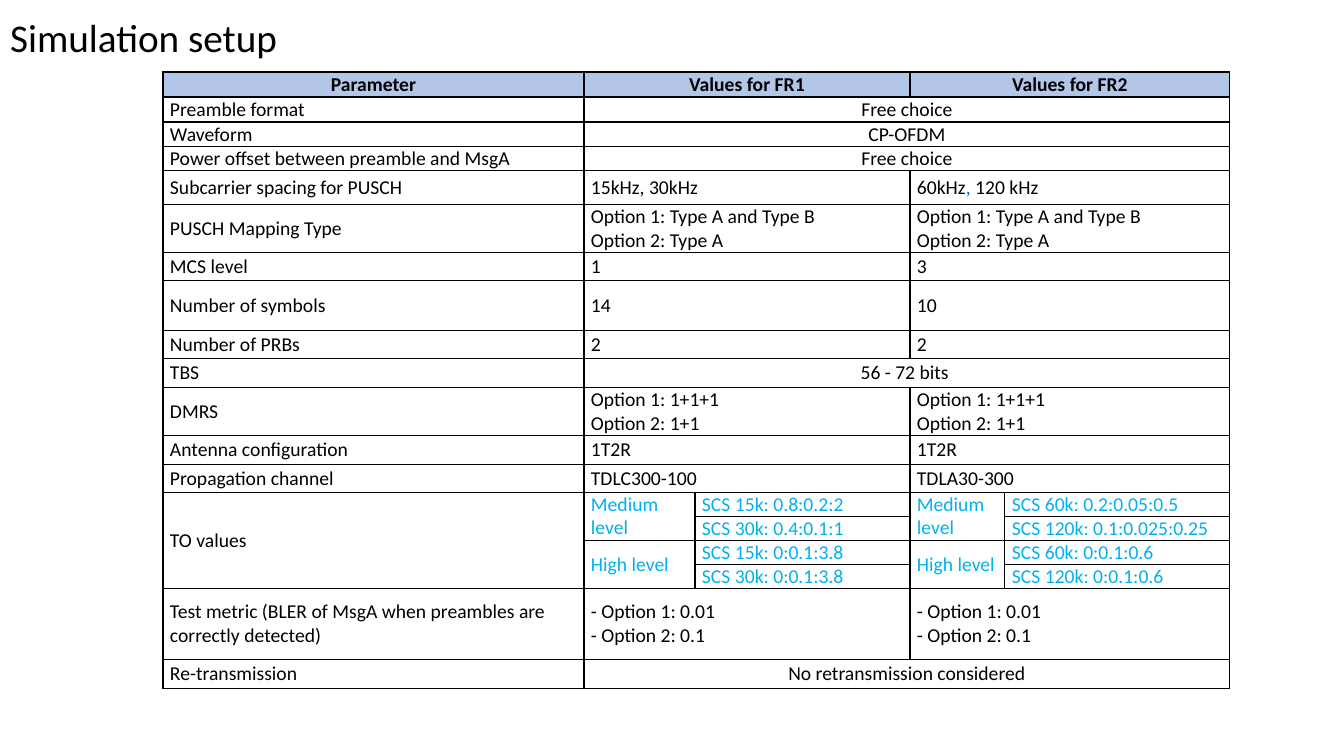
from dataclasses import dataclass

from lxml.etree import SubElement
from pptx import Presentation
from pptx.dml.color import RGBColor
from pptx.enum.text import MSO_ANCHOR, PP_ALIGN
from pptx.oxml.ns import qn
from pptx.slide import Slide
from pptx.table import Table, _Cell
from pptx.text.text import _Run
from pptx.util import Emu, Pt

EMU_PER_PX = 914400 / 100.8
FONT = "Calibri"
BLACK = "000000"
WHITE = "FFFFFF"
HEADER_BLUE = "B4C6E7"
CYAN = "00B0F0"
COMMA_BLUE = "0070C0"
COLUMN_WIDTHS = (421, 111, 215, 95, 225)
FR1_COLUMN, FR2_COLUMN = 1, 3


@dataclass(frozen=True)
class Parameter:
    height: int
    label: str
    fr1: str
    fr2: str | None = None
    accent: str = ""


@dataclass(frozen=True)
class TimingOffset:
    level: str
    fr1: tuple[str, str]
    fr2: tuple[str, str]


@dataclass(frozen=True)
class Entry:
    row: int
    column: int
    text: str
    columns: int = 1
    rows: int = 1
    centered: bool = False
    bold: bool = False
    color: str = BLACK
    fill: str = WHITE
    accent: str = ""


MAPPING_OPTIONS = "Option 1: Type A and Type B\nOption 2: Type A"
DMRS_OPTIONS = "Option 1: 1+1+1\nOption 2: 1+1"
METRIC_OPTIONS = "- Option 1: 0.01\n- Option 2: 0.1"

PARAMETERS_ABOVE = (
    Parameter(25, "Preamble format", "Free choice"),
    Parameter(25, "Waveform", "CP-OFDM"),
    Parameter(24, "Power offset between preamble and MsgA", "Free choice"),
    Parameter(34, "Subcarrier spacing for PUSCH", "15kHz, 30kHz", "60kHz, 120 kHz", ","),
    Parameter(48, "PUSCH Mapping Type", MAPPING_OPTIONS, MAPPING_OPTIONS),
    Parameter(28, "MCS level", "1", "3"),
    Parameter(50, "Number of symbols", "14", "10"),
    Parameter(28, "Number of PRBs", "2", "2"),
    Parameter(29, "TBS", "56 - 72 bits "),
    Parameter(47, "DMRS", DMRS_OPTIONS, DMRS_OPTIONS),
    Parameter(29, "Antenna configuration", "1T2R", "1T2R"),
    Parameter(28, "Propagation channel", "TDLC300-100", "TDLA30-300"),
)
TIMING_OFFSETS = (
    TimingOffset(
        "Medium level",
        ("SCS 15k: 0.8:0.2:2", "SCS 30k: 0.4:0.1:1"),
        ("SCS 60k: 0.2:0.05:0.5", "SCS 120k: 0.1:0.025:0.25"),
    ),
    TimingOffset(
        "High level",
        ("SCS 15k: 0:0.1:3.8", "SCS 30k: 0:0.1:3.8"),
        ("SCS 60k: 0:0.1:0.6", "SCS 120k: 0:0.1:0.6"),
    ),
)
PARAMETERS_BELOW = (
    Parameter(
        71,
        "Test metric (BLER of MsgA when preambles are correctly detected)",
        METRIC_OPTIONS,
        METRIC_OPTIONS,
    ),
    Parameter(29, "Re-transmission", "No retransmission considered"),
)
HEADER_HEIGHT = 25
TIMING_HEIGHT = 24
TIMING_ROWS = 2 * len(TIMING_OFFSETS)
ROW_HEIGHTS = (
    HEADER_HEIGHT,
    *(parameter.height for parameter in PARAMETERS_ABOVE),
    *[TIMING_HEIGHT] * TIMING_ROWS,
    *(parameter.height for parameter in PARAMETERS_BELOW),
)


def px(length: int) -> Emu:
    return Emu(round(length * EMU_PER_PX))


def rgb(color: str) -> RGBColor:
    return RGBColor.from_string(color)


def format_run(run: _Run, size: int, color: str, bold: bool = False) -> None:
    run.font.name = FONT
    run.font.size = Pt(size)
    run.font.bold = bold
    run.font.color.rgb = rgb(color)


def header_entries() -> list[Entry]:
    headings = (
        (0, "Parameter", 1),
        (FR1_COLUMN, "Values for FR1", 2),
        (FR2_COLUMN, "Values for FR2", 2),
    )
    return [
        Entry(0, column, text, columns, centered=True, bold=True, fill=HEADER_BLUE)
        for column, text, columns in headings
    ]


def parameter_entries(parameters: tuple[Parameter, ...], first_row: int) -> list[Entry]:
    entries = []
    for row, parameter in enumerate(parameters, first_row):
        entries.append(Entry(row, 0, parameter.label))
        if parameter.fr2 is None:
            entries.append(Entry(row, FR1_COLUMN, parameter.fr1, 4, centered=True))
        else:
            entries.append(Entry(row, FR1_COLUMN, parameter.fr1, 2))
            entries.append(Entry(row, FR2_COLUMN, parameter.fr2, 2, accent=parameter.accent))
    return entries


def timing_entries(first_row: int) -> list[Entry]:
    entries = [Entry(first_row, 0, "TO values", rows=TIMING_ROWS)]
    for index, offset in enumerate(TIMING_OFFSETS):
        row = first_row + 2 * index
        for column, values in ((FR1_COLUMN, offset.fr1), (FR2_COLUMN, offset.fr2)):
            entries.append(Entry(row, column, offset.level, rows=2, color=CYAN))
            for step, value in enumerate(values):
                entries.append(Entry(row + step, column + 1, value, color=CYAN))
    return entries


def style_cell(cell: _Cell) -> None:
    cell.margin_left = cell.margin_right = px(7)
    cell.margin_top = cell.margin_bottom = 0
    cell.vertical_anchor = MSO_ANCHOR.MIDDLE
    properties = cell._tc.get_or_add_tcPr()
    for side in ("a:lnL", "a:lnR", "a:lnT", "a:lnB"):
        line = SubElement(properties, qn(side), w=str(Pt(1)))
        SubElement(SubElement(line, qn("a:solidFill")), qn("a:srgbClr"), val=BLACK)
    cell.fill.solid()
    cell.fill.fore_color.rgb = rgb(WHITE)


def fill_entry(table: Table, entry: Entry) -> None:
    cell = table.cell(entry.row, entry.column)
    if entry.columns > 1 or entry.rows > 1:
        cell.merge(
            table.cell(entry.row + entry.rows - 1, entry.column + entry.columns - 1)
        )
    cell.fill.fore_color.rgb = rgb(entry.fill)
    cell.text_frame.text = entry.text
    for paragraph in cell.text_frame.paragraphs:
        paragraph.alignment = PP_ALIGN.CENTER if entry.centered else PP_ALIGN.LEFT
        if entry.accent:
            pieces = paragraph.text.partition(entry.accent)
            paragraph.clear()
            for piece in pieces:
                paragraph.add_run().text = piece
        for run in paragraph.runs:
            color = COMMA_BLUE if run.text == entry.accent else entry.color
            format_run(run, 14, color, entry.bold)


def add_title(slide: Slide) -> None:
    title = slide.shapes.title
    title.left, title.top, title.width, title.height = px(0), px(0), px(1159), px(79)
    title.text_frame.text = "Simulation setup"
    title.text_frame.vertical_anchor = MSO_ANCHOR.MIDDLE
    paragraph = title.text_frame.paragraphs[0]
    paragraph.alignment = PP_ALIGN.LEFT
    paragraph.line_spacing = 0.9
    format_run(paragraph.runs[0], 28, BLACK)


def add_parameter_table(slide: Slide) -> None:
    table = slide.shapes.add_table(
        len(ROW_HEIGHTS), len(COLUMN_WIDTHS),
        px(163), px(72), px(sum(COLUMN_WIDTHS)), px(sum(ROW_HEIGHTS)),
    ).table
    table.first_row = table.horz_banding = False
    for column, width in zip(table.columns, COLUMN_WIDTHS):
        column.width = px(width)
    for row, height in zip(table.rows, ROW_HEIGHTS):
        row.height = px(height)
    for cell in table.iter_cells():
        style_cell(cell)
    timing_row = 1 + len(PARAMETERS_ABOVE)
    for entry in (
        *header_entries(),
        *parameter_entries(PARAMETERS_ABOVE, 1),
        *timing_entries(timing_row),
        *parameter_entries(PARAMETERS_BELOW, timing_row + TIMING_ROWS),
    ):
        fill_entry(table, entry)


def main() -> None:
    presentation = Presentation()
    presentation.slide_width, presentation.slide_height = px(1344), px(756)
    slide = presentation.slides.add_slide(presentation.slide_layouts[5])
    add_title(slide)
    add_parameter_table(slide)
    presentation.save("out.pptx")


if __name__ == "__main__":
    main()
